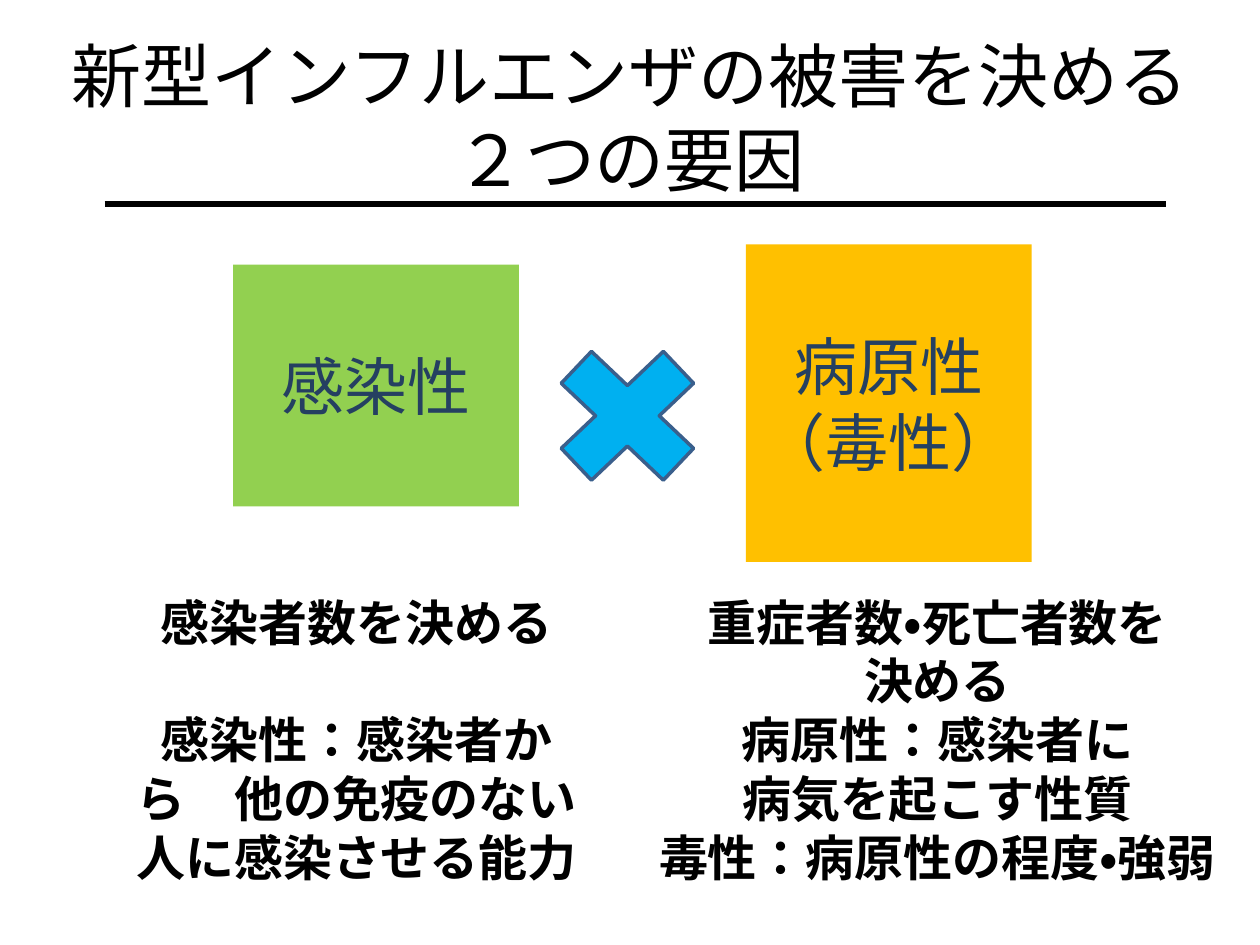
from pptx import Presentation
from pptx.dml.color import RGBColor
from pptx.enum import lang, shapes, text
from pptx.oxml.ns import qn
from pptx.util import Pt
from lxml import etree

BLACK = RGBColor(0x00, 0x00, 0x00)
NAVY = RGBColor(0x25, 0x40, 0x61)
GREEN = RGBColor(0x92, 0xD0, 0x50)
AMBER = RGBColor(0xFF, 0xC0, 0x00)
SKY = RGBColor(0x00, 0xB0, 0xF0)
EDGE = RGBColor(0x3A, 0x5F, 0x8C)


def add_run(par, words, size, color, bold=False):
    par.alignment = text.PP_ALIGN.CENTER
    run = par.add_run()
    run.text = words
    font = run.font
    font.name, font.size, font.bold = "Arial", Pt(size), bold
    font.color.rgb = color
    font.language_id = lang.MSO_LANGUAGE_ID.JAPANESE


def add_shape(kind, left, top, width, height, fill):
    shape = slide.shapes.add_shape(kind, Pt(left), Pt(top), Pt(width), Pt(height))
    shape.shadow.inherit = False
    shape.fill.solid()
    shape.fill.fore_color.rgb = fill
    shape.line.fill.background()
    return shape


prs = Presentation()
prs.slide_width, prs.slide_height = Pt(720), Pt(540)
slide = prs.slides.add_slide(prs.slide_layouts[5])

# Title in two lines
title = slide.shapes.title
title.left, title.top, title.width, title.height = Pt(0), Pt(21.6), Pt(720), Pt(90)
frame = title.text_frame
frame.vertical_anchor = text.MSO_ANCHOR.MIDDLE
par = frame.paragraphs[0]
add_run(par, "新型インフルエンザの被害を決める", 40, BLACK)
par.add_line_break()
add_run(par, "２つの要因", 40, BLACK)

# The two factors
RECT = shapes.MSO_SHAPE.RECTANGLE
for words, left, top, height, fill in (
    ("感染性", 133.2, 151.2, 138.2, GREEN),
    ("病原性（毒性）", 426.2, 139.7, 181.4, AMBER),
):
    box = add_shape(RECT, left, top, 163.4, height, fill)
    frame = box.text_frame
    frame.word_wrap = True
    frame.vertical_anchor = text.MSO_ANCHOR.MIDDLE
    add_run(frame.paragraphs[0], words, 36, NAVY)

# Multiplication sign between them
cross = add_shape(shapes.MSO_SHAPE.MATH_MULTIPLY, 302.4, 184.3, 112.3, 106.6, SKY)
cross.line.color.rgb = EDGE
cross.line.width = Pt(2)

# Explanations: left, width, and lines with the space before each
for left, width, lines in (
    (64.8, 277.9, (
        ("感染者数を決める", 0),
        ("感染性：感染者から　他の免疫のない人に感染させる能力", 33.7),
    )),
    (362.9, 345.6, (
        ("重症者数・死亡者数を", 0),
        ("決める", 0),
        ("病原性：感染者に", 0),
        ("病気を起こす性質", 0),
        ("毒性：病原性の程度・強弱", 0),
    )),
):
    note = slide.shapes.add_textbox(Pt(left), Pt(334.8), Pt(width), Pt(177.1))
    frame = note.text_frame
    frame.word_wrap = True
    for i, (words, gap) in enumerate(lines):
        par = frame.add_paragraph() if i else frame.paragraphs[0]
        par.space_before = Pt(gap)
        add_run(par, words, 28, BLACK, True)

# Rule under the title
rule = slide.shapes.add_connector(
    shapes.MSO_CONNECTOR.STRAIGHT, Pt(59.8), Pt(116.6), Pt(666), Pt(116.6))
rule.line.color.rgb = BLACK
rule.line.width = Pt(3)
etree.SubElement(rule.element.spPr, qn("a:effectLst"))

prs.save("out.pptx")
